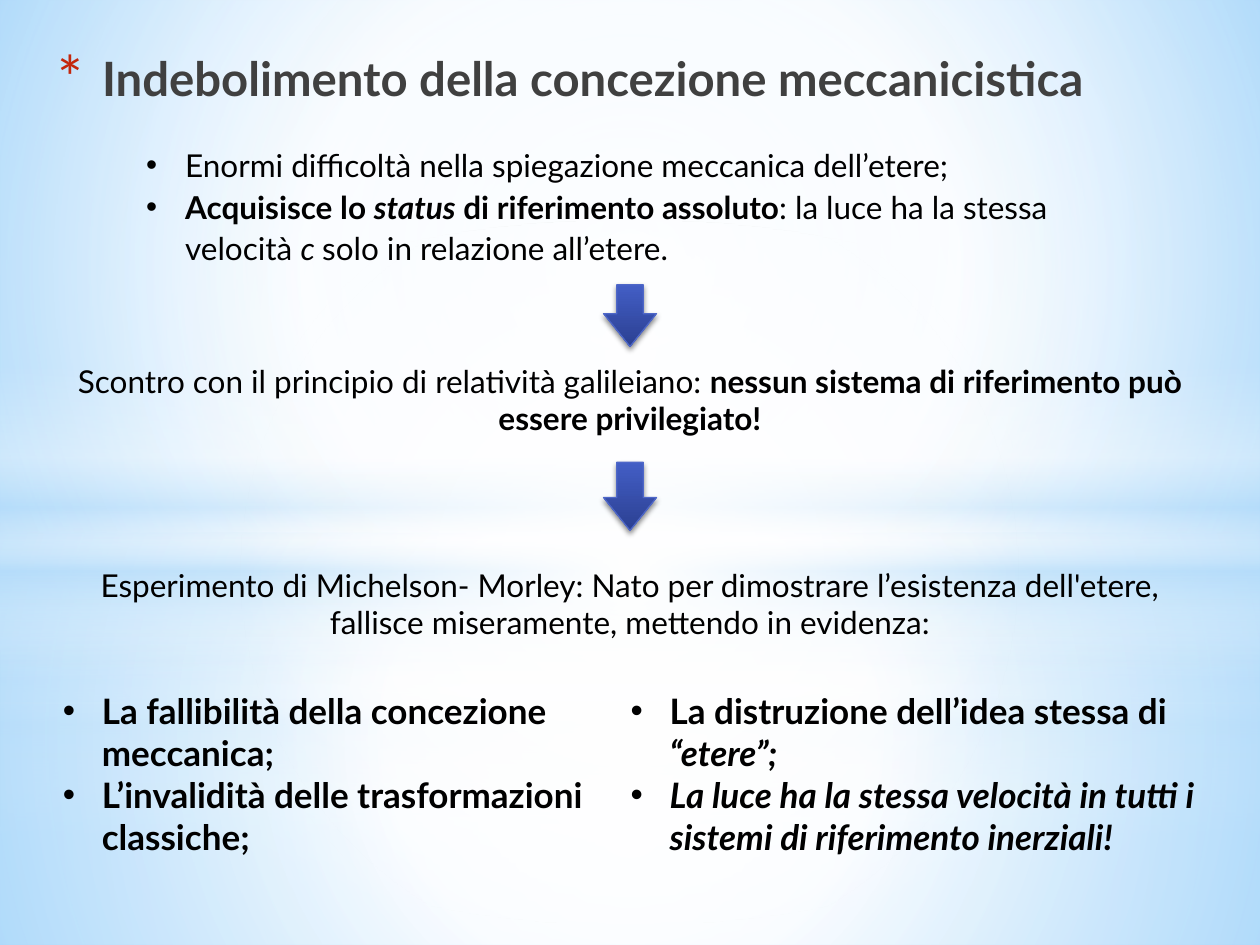
from dataclasses import dataclass
from typing import Optional

from lxml import etree
from pptx import Presentation
from pptx.dml.color import RGBColor
from pptx.enum import shapes, text
from pptx.oxml.ns import nsdecls, qn
from pptx.oxml import parse_xml
from pptx.util import Inches, Pt

FONT = "Lato"
BLACK = RGBColor(0x00, 0x00, 0x00)
TITLE_GREY = RGBColor(0x40, 0x40, 0x40)
STAR_RED = RGBColor(0xC3, 0x26, 0x0C)
WHITE = RGBColor(0xFF, 0xFF, 0xFF)
PALE_BLUE = RGBColor(0xB4, 0xDC, 0xFA)
SKY_LIGHT = RGBColor(0x9E, 0xD5, 0xFF)
SKY_DEEP = RGBColor(0x5B, 0xB9, 0xFF)
ARROW_TOP = RGBColor(0x43, 0x5E, 0xC5)
ARROW_BOTTOM = RGBColor(0x2B, 0x40, 0x92)
ARROW_LINE = RGBColor(0x4E, 0x67, 0xC8)

RECTANGLE = shapes.MSO_SHAPE.RECTANGLE
OVAL = shapes.MSO_SHAPE.OVAL
CENTRE = (50, 50, 50, 50)


@dataclass
class Stop:
    position: int
    colour: RGBColor
    opacity: int = 100


@dataclass
class Gradient:
    """Runs from top to bottom, or in circles around a focus (left, top, right, bottom in %)."""
    stops: list[Stop]
    focus: Optional[tuple[int, int, int, int]] = None


@dataclass
class Layer:
    kind: shapes.MSO_SHAPE
    top: float
    height: float
    gradient: Gradient


@dataclass
class Span:
    words: str
    bold: bool = False
    italic: bool = False


@dataclass
class Bullet:
    mark: str
    indent: float
    colour: Optional[RGBColor] = None
    percent: int = 100


@dataclass
class Style:
    size: float
    colour: RGBColor = BLACK
    align: text.PP_ALIGN = text.PP_ALIGN.LEFT
    spacing: float = 1.0
    bullet: Optional[Bullet] = None


def veil(middle: int, *opacities: int) -> Gradient:
    colours = (WHITE, WHITE, PALE_BLUE)
    return Gradient([Stop(*stop) for stop in zip((0, middle, 100), colours, opacities)], CENTRE)


def glow(edge: int) -> Gradient:
    return Gradient([Stop(0, WHITE), Stop(edge, WHITE, 0)], CENTRE)


SKY = Gradient([Stop(0, SKY_LIGHT), Stop(60, WHITE), Stop(100, SKY_DEEP)], (20, 10, 20, 60))
HORIZON = Gradient([Stop(0, WHITE, 0), Stop(29, WHITE, 30), Stop(45, PALE_BLUE, 40),
                    Stop(55, WHITE, 26), Stop(65, PALE_BLUE, 60), Stop(100, WHITE, 0)])
ARROW_FILL = Gradient([Stop(0, ARROW_TOP), Stop(100, ARROW_BOTTOM)])

LAYERS = [
    Layer(RECTANGLE, 5.58, 1.92, veil(37, 91, 76, 79)),
    Layer(RECTANGLE, 0, 5.58, veil(48, 89, 62, 79)),
    Layer(RECTANGLE, 4.12, 2.5, HORIZON),
    Layer(OVAL, 1.75, 5.58, glow(56)),
    Layer(RECTANGLE, 4.23, 3.27, veil(37, 92, 77, 80)),
    Layer(RECTANGLE, 0, 4.23, veil(48, 90, 63, 80)),
    Layer(RECTANGLE, 2.9, 2.5, HORIZON),
    Layer(OVAL, 1.75, 5.58, glow(54)),
]

DOT = Bullet("•", 0.31)
TITLE_STYLE = Style(27, TITLE_GREY, bullet=Bullet("*", 0.35, STAR_RED, 128))
ETHER_STYLE = Style(18, spacing=1.1, bullet=DOT)
STEP_STYLE = Style(18, align=text.PP_ALIGN.CENTER)
RESULT_STYLE = Style(20, bullet=DOT)

TITLE = [[Span("Indebolimento della concezione meccanicistica", bold=True)]]
ETHER = [
    [Span("Enormi difficoltà nella spiegazione meccanica dell’etere;")],
    [Span("Acquisisce lo ", bold=True), Span("status", bold=True, italic=True),
     Span(" di riferimento assoluto", bold=True), Span(": la luce ha la stessa velocità "),
     Span("c ", italic=True), Span("solo in relazione all’etere.")],
]
STEPS = [
    (2.82, [[Span("Scontro con il principio di relatività galileiano: "),
             Span("nessun sistema di riferimento può essere privilegiato!", bold=True)]]),
    (4.44, [[Span("Esperimento di Michelson- Morley: Nato per dimostrare l’esistenza dell'etere, "
                  "fallisce miseramente, mettendo in evidenza:")]]),
]
RESULTS = [
    [Span("La fallibilità della concezione meccanica;", bold=True)],
    [Span("L’invalidità delle trasformazioni classiche;", bold=True)],
    [Span("La distruzione dell’idea stessa di ", bold=True),
     Span("“etere”;", bold=True, italic=True)],
    [Span("La luce ha la stessa velocità in tutti i sistemi di riferimento inerziali!",
          bold=True, italic=True)],
]
ARROWS = [(2.26, 0.49), (3.67, 0.54)]


def add_child(parent, tag: str, **attributes):
    child = etree.SubElement(parent, qn(tag))
    for name, value in attributes.items():
        child.set(name, str(value))
    return child


def add_colour(parent, colour: RGBColor, opacity: int = 100) -> None:
    element = add_child(parent, "a:srgbClr", val=colour)
    if opacity < 100:
        add_child(element, "a:alpha", val=opacity * 1000)


def apply_gradient(fill, properties, gradient: Gradient) -> None:
    fill.solid()
    element = parse_xml(f'<a:gradFill {nsdecls("a")} rotWithShape="1"/>')
    stops = add_child(element, "a:gsLst")
    for stop in gradient.stops:
        add_colour(add_child(stops, "a:gs", pos=stop.position * 1000), stop.colour, stop.opacity)
    if gradient.focus:
        circle = add_child(element, "a:path", path="circle")
        edges = {side: value * 1000 for side, value in zip("ltrb", gradient.focus)}
        add_child(circle, "a:fillToRect", **edges)
    else:
        add_child(element, "a:lin", ang=90 * 60000, scaled=0)
    properties.replace(properties.find(qn("a:solidFill")), element)


def place(shape, left: float, top: float, width: float, height: float) -> None:
    shape.left, shape.top = Inches(left), Inches(top)
    shape.width, shape.height = Inches(width), Inches(height)


def add_layer(slide, layer: Layer) -> None:
    shape = slide.shapes.add_shape(layer.kind, 0, Inches(layer.top), Inches(10), Inches(layer.height))
    shape.shadow.inherit = False
    apply_gradient(shape.fill, shape._element.spPr, layer.gradient)
    shape.line.fill.background()


def add_arrow(slide, top: float, height: float) -> None:
    arrow = slide.shapes.add_shape(shapes.MSO_SHAPE.DOWN_ARROW, Inches(4.79), Inches(top),
                                   Inches(0.42), Inches(height))
    arrow.adjustments[0], arrow.adjustments[1] = 0.5, 0.62
    properties = arrow._element.spPr
    apply_gradient(arrow.fill, properties, ARROW_FILL)
    arrow.line.color.rgb = ARROW_LINE
    arrow.line.width = Pt(0.75)
    arrow.shadow.inherit = False
    shadow = add_child(properties.find(qn("a:effectLst")), "a:outerShdw", blurRad=Pt(3.1),
                       dist=Pt(1.8), dir=90 * 60000, rotWithShape=0)
    add_colour(shadow, BLACK, 45)


def set_bullet(para, bullet: Bullet) -> None:
    properties = para._p.get_or_add_pPr()
    properties.set("marL", str(Inches(bullet.indent)))
    properties.set("indent", str(-Inches(bullet.indent)))
    if bullet.colour is not None:
        add_colour(add_child(properties, "a:buClr"), bullet.colour)
    add_child(properties, "a:buSzPct", val=bullet.percent * 1000)
    add_child(properties, "a:buFont", typeface="Arial" if bullet is DOT else FONT)
    add_child(properties, "a:buChar", char=bullet.mark)


def write(frame, paragraphs: list[list[Span]], style: Style) -> None:
    frame.word_wrap = True
    frame.auto_size = text.MSO_AUTO_SIZE.NONE
    for index, spans in enumerate(paragraphs):
        para = frame.add_paragraph() if index else frame.paragraphs[0]
        if style.bullet:
            set_bullet(para, style.bullet)
        para.alignment = style.align
        para.line_spacing = style.spacing
        para.space_before = Pt(0)
        for span in spans:
            run = para.add_run()
            run.text = span.words
            font = run.font
            font.name, font.size, font.color.rgb = FONT, Pt(style.size), style.colour
            font.bold, font.italic = span.bold, span.italic


def add_text(slide, left: float, top: float, width: float, height: float,
             paragraphs: list[list[Span]], style: Style):
    box = slide.shapes.add_textbox(Inches(left), Inches(top), Inches(width), Inches(height))
    write(box.text_frame, paragraphs, style)
    return box.text_frame


def main() -> None:
    deck = Presentation()
    deck.slide_width, deck.slide_height = Inches(10), Inches(7.5)
    slide = deck.slides.add_slide(deck.slide_layouts[1])
    title, body = slide.shapes.title, slide.placeholders[1]
    background = slide.background.fill
    background.solid()
    apply_gradient(background, slide._element.cSld.find(qn("p:bg")).find(qn("p:bgPr")), SKY)

    for layer in LAYERS:
        add_layer(slide, layer)

    slide.shapes._spTree.append(body._element)
    place(body, 1.06, 1.08, 7.88, 1.4)
    write(body.text_frame, ETHER, ETHER_STYLE)
    for (top, paragraphs), arrow in zip(STEPS, ARROWS):
        add_text(slide, 0.41, top, 9.18, 0.71, paragraphs, STEP_STYLE)
        add_arrow(slide, *arrow)

    results = add_text(slide, 0.4, 5.42, 9.21, 2.12, RESULTS, RESULT_STYLE)
    results.margin_bottom = Inches(0.6)  # leaves four lines in each column
    results._txBody.bodyPr.set("numCol", "2")

    slide.shapes._spTree.append(title._element)
    place(title, 0.36, 0.11, 9.23, 0.78)
    title.text_frame.vertical_anchor = text.MSO_ANCHOR.BOTTOM
    write(title.text_frame, TITLE, TITLE_STYLE)
    deck.save("out.pptx")


if __name__ == "__main__":
    main()
